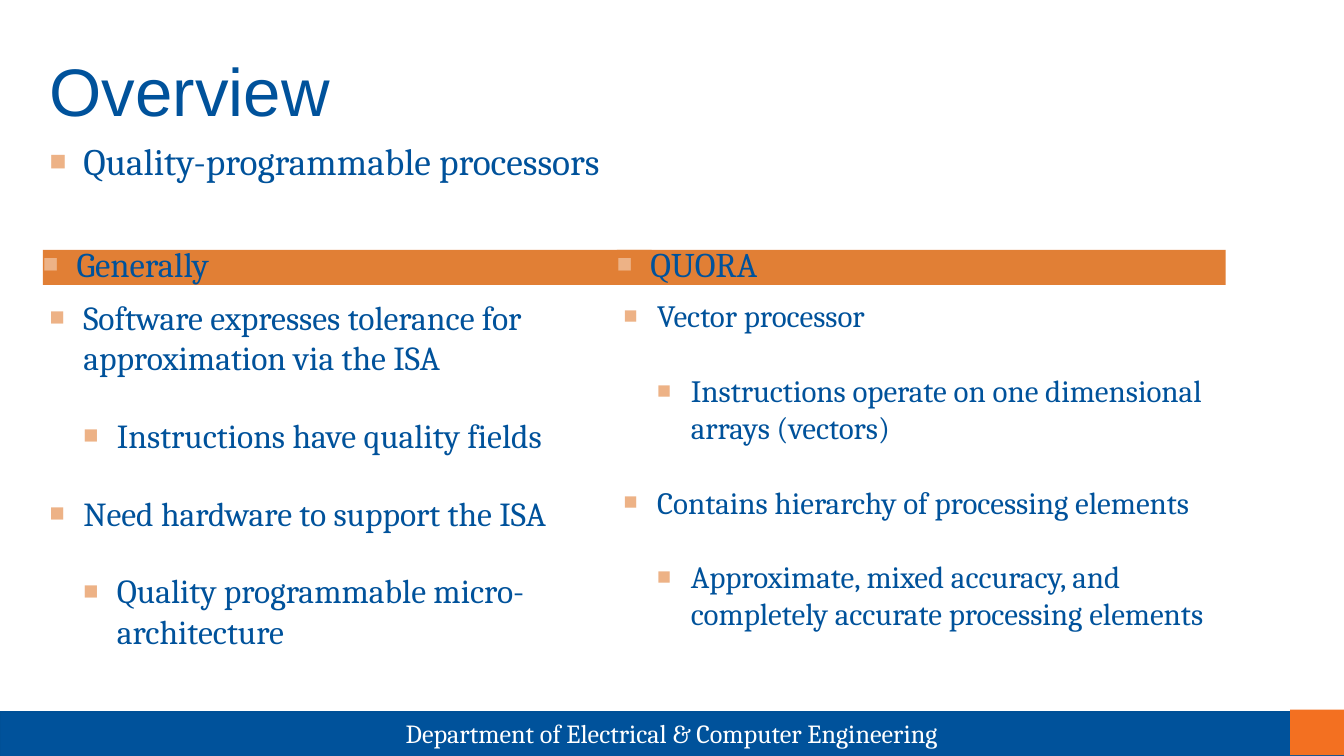
import pptx
import pptx.util
import pptx.dml.color
import pptx.enum.shapes
import pptx.enum.text
import pptx.oxml
import pptx.oxml.ns

Inches = pptx.util.Inches
Pt = pptx.util.Pt
RGBColor = pptx.dml.color.RGBColor
Anchor = pptx.enum.text.MSO_ANCHOR
Align = pptx.enum.text.PP_ALIGN

BLUE = RGBColor(0x00, 0x52, 0x9B)
EDGE_BLUE = RGBColor(0x00, 0x50, 0x97)
ORANGE = RGBColor(0xE1, 0x7F, 0x35)
BRIGHT_ORANGE = RGBColor(0xF3, 0x70, 0x21)
BULLET_ORANGE = RGBColor(0xED, 0xB2, 0x86)
WHITE = RGBColor(0xFF, 0xFF, 0xFF)

TITLE = "Overview"
TOPIC = "Quality-programmable processors"
FOOTER = "Department of Electrical & Computer Engineering"
COLUMNS = [
    {
        "heading": "Generally",
        "left": 0.32,
        "body_size": (4.53, 2.75),
        "font_size": 18,
        "points": [
            (0, "Software expresses tolerance for approximation via the ISA"),
            (1, "Instructions have quality fields"),
            (0, "Need hardware to support the ISA"),
            (1, "Quality programmable micro-architecture"),
        ],
    },
    {
        "heading": "QUORA",
        "left": 4.59,
        "body_size": (4.67, 2.94),
        "font_size": 16.6,
        "points": [
            (0, "Vector processor"),
            (1, "Instructions operate on one dimensional arrays (vectors)"),
            (0, "Contains hierarchy of processing elements"),
            (1, "Approximate, mixed accuracy, and completely accurate processing elements"),
        ],
    },
]
SLIDE_WIDTH = 10
SLIDE_HEIGHT = SLIDE_WIDTH * 9 / 16
HEADING_TOP, HEADING_WIDTH, HEADING_HEIGHT = 1.86, 4.53, 0.26
BODY_TOP = 2.16
INDENT = 0.25
MARGIN = 0.05


def apply_format(target, values):
    for name, value in values.items():
        setattr(target, name, value)


def format_frame(frame, margin=MARGIN, anchor=Anchor.TOP):
    sides = ("left", "top", "right", "bottom")
    apply_format(frame, {f"margin_{side}": Inches(margin) for side in sides})
    apply_format(frame, {"word_wrap": True, "vertical_anchor": anchor})


def write_text(paragraph, text, size, font="Cambria", color=BLUE, align=Align.LEFT):
    paragraph.alignment = align
    run = paragraph.add_run()
    run.text = text
    apply_format(run.font, {"name": font, "size": Pt(size)})
    run.font.color.rgb = color


def add_bullet(paragraph, level):
    properties = paragraph._p.get_or_add_pPr()
    properties.set("marL", str(Inches(INDENT * (level + 1))))
    properties.set("indent", str(-Inches(INDENT)))
    namespace = pptx.oxml.ns.nsdecls("a")
    for element in (
        f'<a:buClr {namespace}><a:srgbClr val="{BULLET_ORANGE}"/></a:buClr>',
        f'<a:buSzPct {namespace} val="75000"/>',
        f'<a:buFont {namespace} typeface="Arial"/>',
        f'<a:buChar {namespace} char="■"/>',
    ):
        properties.append(pptx.oxml.parse_xml(element))


def write_bullets(frame, points, size, line_spacing=None):
    for index, (level, text) in enumerate(points):
        paragraph = frame.add_paragraph() if index else frame.paragraphs[0]
        add_bullet(paragraph, level)
        apply_format(paragraph, {
            "level": level,
            "space_before": Pt(20 if index else 0),
            "line_spacing": line_spacing,
        })
        write_text(paragraph, text, size)


def add_text_box(slide, box):
    frame = slide.shapes.add_textbox(*map(Inches, box)).text_frame
    format_frame(frame)
    return frame


def add_bar(slide, box, fill, line=None):
    rectangle = pptx.enum.shapes.MSO_SHAPE.RECTANGLE
    shape = slide.shapes.add_shape(rectangle, *map(Inches, box))
    shape.shadow.inherit = False
    shape.fill.solid()
    shape.fill.fore_color.rgb = fill
    if line is None:
        shape.line.fill.background()
    else:
        shape.line.color.rgb = line
        shape.line.width = Pt(1)
    return shape


def add_title(slide):
    title = slide.shapes.title
    apply_format(title, {
        "left": Inches(0.32), "top": Inches(0.31),
        "width": Inches(9.36), "height": Inches(0.92),
    })
    format_frame(title.text_frame)
    title.text_frame.margin_top = Inches(0.06)
    write_text(title.text_frame.paragraphs[0], TITLE, 36, "Arial")


def add_footer(slide):
    add_bar(slide, (0, 5.3, SLIDE_WIDTH, 0.33), BLUE, EDGE_BLUE)
    frame = add_text_box(slide, (0.05, 5.29, 9.9, 0.32))
    write_text(frame.paragraphs[0], FOOTER, 14, color=WHITE, align=Align.CENTER)
    add_bar(slide, (9.6, 5.28, 0.42, 0.34), BRIGHT_ORANGE)


def add_column(slide, column):
    left = column["left"]
    heading = add_bar(slide, (left, HEADING_TOP, HEADING_WIDTH, HEADING_HEIGHT), ORANGE)
    format_frame(heading.text_frame, 0, Anchor.MIDDLE)
    write_bullets(heading.text_frame, [(0, column["heading"])], 18.5, 0.8)
    body = add_text_box(slide, (left, BODY_TOP, *column["body_size"]))
    write_bullets(body, column["points"], column["font_size"])


def main():
    presentation = pptx.Presentation()
    presentation.slide_width = Inches(SLIDE_WIDTH)
    presentation.slide_height = Inches(SLIDE_HEIGHT)
    slide = presentation.slides.add_slide(presentation.slide_layouts[5])
    add_footer(slide)
    add_title(slide)
    write_bullets(add_text_box(slide, (0.32, 0.98, 9.62, 0.64)), [(0, TOPIC)], 20)
    for column in COLUMNS:
        add_column(slide, column)
    presentation.save("out.pptx")


if __name__ == "__main__":
    main()
